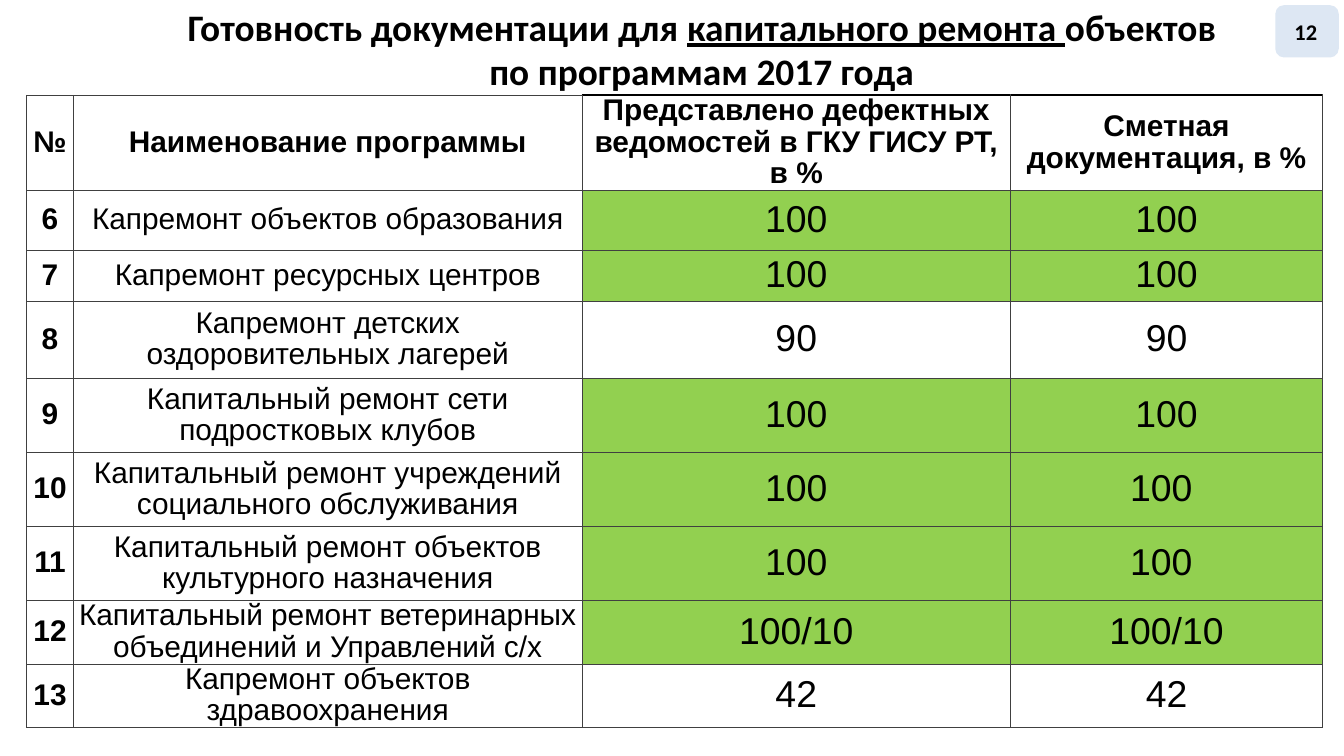
from collections import namedtuple
from dataclasses import dataclass

from lxml import etree
from pptx import Presentation
from pptx.dml.color import RGBColor
from pptx.enum import shapes, text
from pptx.oxml import ns
from pptx.util import Pt

Box = namedtuple("Box", "left top width height")


@dataclass(frozen=True)
class Theme:
    ink: str = "000000"
    grid: str = "404040"
    ready: str = "92D050"
    badge: str = "DDE7F3"
    title_font: str = "Calibri"
    table_font: str = "Arial"
    title_size: int = 20
    value_size: int = 20
    label_size: int = 16
    badge_size: int = 12


THEME = Theme()
COLUMN_WIDTHS = [25.2, 272.4, 229.6, 167.2]
ROW_HEIGHTS = [51, 32.1, 27.3, 41.3, 39.7, 39.7, 39.7, 34.1, 33.8]
HEADERS = [
    "№",
    "Наименование программы",
    "Представлено дефектных ведомостей в ГКУ ГИСУ РТ,\nв %",
    "Сметная документация, в %",
]
PROGRAMS = [
    ("6", "Капремонт объектов образования", "100", "100"),
    ("7", "Капремонт ресурсных центров", "100", "100"),
    ("8", "Капремонт детских оздоровительных лагерей", "90", "90"),
    ("9", "Капитальный ремонт сети подростковых клубов", "100", "100"),
    ("10", "Капитальный ремонт учреждений социального обслуживания", "100", "100 "),
    ("11", "Капитальный ремонт объектов культурного назначения", "100", "100 "),
    ("12", "Капитальный ремонт ветеринарных объединений и Управлений с/х",
     "100/10", "100/10"),
    ("13", "Капремонт объектов здравоохранения", "42", "42"),
]


def write(frame, content, *, size, font, bold=True, spacing=None, underlined=None):
    for index, line in enumerate(content.split("\n")):
        para = frame.paragraphs[0] if index == 0 else frame.add_paragraph()
        para.alignment = text.PP_ALIGN.CENTER
        if spacing:
            para.line_spacing = spacing
        before, marked, after = line.partition(underlined) if underlined else (line, "", "")
        for words in filter(None, (before, marked, after)):
            span = para.add_run()
            span.text = words
            span.font.size = Pt(size)
            span.font.name = font
            span.font.bold = bold
            span.font.underline = words == underlined
            span.font.color.rgb = RGBColor.from_string(THEME.ink)


def draw_border(cell, side, color, width):
    line = etree.SubElement(cell._tc.get_or_add_tcPr(), ns.qn(f"a:ln{side}"), w=str(Pt(width)))
    fill = etree.SubElement(line, ns.qn("a:solidFill"))
    etree.SubElement(fill, ns.qn("a:srgbClr"), val=color)


def format_cell(cell, content, row, column):
    cell.vertical_anchor = text.MSO_ANCHOR.MIDDLE
    cell.margin_left = cell.margin_right = Pt(0.5)
    cell.margin_top = cell.margin_bottom = 0
    for side in "LRTB":
        heavy = side == "T" and row == 0 and column >= 2
        draw_border(cell, side, THEME.ink if heavy else THEME.grid, 1 if heavy else 0.5)
    is_value = row > 0 and column >= 2
    if is_value and content.startswith("100"):
        cell.fill.solid()
        cell.fill.fore_color.rgb = RGBColor.from_string(THEME.ready)
    else:
        cell.fill.background()
    write(cell.text_frame, content, font=THEME.table_font, spacing=0.95,
          size=THEME.value_size if is_value else THEME.label_size,
          bold=row == 0 or column == 0)


def add_readiness_table(page, box):
    rows = [HEADERS, *PROGRAMS]
    table = page.shapes.add_table(len(rows), len(HEADERS), *map(Pt, box)).table
    table.first_row = table.horz_banding = False
    for column, width in zip(table.columns, COLUMN_WIDTHS):
        column.width = Pt(width)
    for row, height in zip(table.rows, ROW_HEIGHTS):
        row.height = Pt(height)
    for row, contents in enumerate(rows):
        for column, content in enumerate(contents):
            format_cell(table.cell(row, column), content, row, column)


def add_title(page, box):
    frame = page.shapes.add_textbox(*map(Pt, box)).text_frame
    frame.word_wrap = True
    write(frame, "Готовность документации для капитального ремонта объектов\n"
          "по программам 2017 года", size=THEME.title_size, font=THEME.title_font,
          underlined="капитального ремонта ")


def add_page_number(page, box):
    badge = page.shapes.add_shape(shapes.MSO_SHAPE.ROUNDED_RECTANGLE, *map(Pt, box))
    badge.shadow.inherit = False
    badge.fill.solid()
    badge.fill.fore_color.rgb = RGBColor.from_string(THEME.badge)
    badge.line.fill.background()
    frame = badge.text_frame
    frame.vertical_anchor = text.MSO_ANCHOR.MIDDLE
    frame.margin_left, frame.margin_right = Pt(5.8), Pt(7.2)
    write(frame, "12", size=THEME.badge_size, font=THEME.title_font)


def main():
    deck = Presentation()
    deck.slide_width, deck.slide_height = Pt(720), Pt(405)
    page = deck.slides.add_slide(deck.slide_layouts[6])
    add_readiness_table(page, Box(14.2, 51, sum(COLUMN_WIDTHS), sum(ROW_HEIGHTS)))
    add_title(page, Box(80, -1.5, 592, 55.6))
    add_page_number(page, Box(683.2, 2.8, 34, 28))
    deck.save("out.pptx")


if __name__ == "__main__":
    main()
